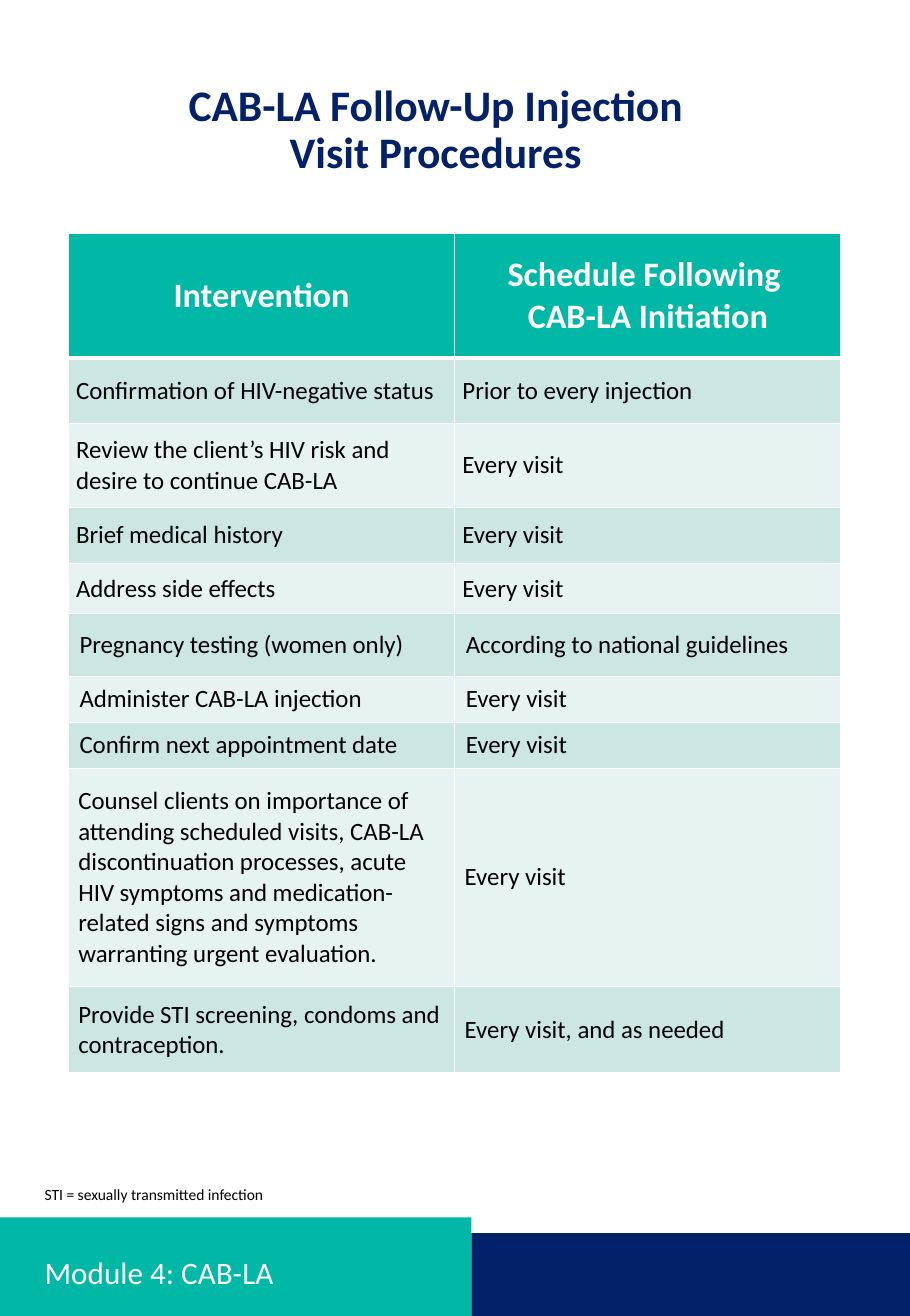
from lxml import etree
from pptx import Presentation
from pptx.dml.color import RGBColor
from pptx.enum import shapes, text
from pptx.oxml.ns import qn
from pptx.util import Inches, Pt

COLORS = {"navy": "022169", "teal": "00B8A5", "white": "FFFFFF", "black": "000000",
          "band_dark": "CCE6E1", "band_light": "E7F3F0"}
FONT = "Calibri"
SLIDE_SIZE = (65 / 8, 11.75)

FOOTER_BARS = [
    ((4.21, 11.01, 3.92, 0.75), "navy"),
    ((0, 10.87, 4.21, 0.89), "teal"),
]
LABELS = [
    {"text": "CAB-LA Follow-Up Injection Visit Procedures", "at": (1.41, 0.7, 4.96, 1.06),
     "size": 28, "color": "navy", "bold": True, "align": text.PP_ALIGN.CENTER,
     "anchor": text.MSO_ANCHOR.TOP, "spacing": 0.9},
    {"text": "STI = sexually transmitted infection", "at": (0.3, 10.53, 2.2, 0.27),
     "size": 10, "color": "black", "bold": False, "align": text.PP_ALIGN.LEFT,
     "anchor": text.MSO_ANCHOR.TOP, "spacing": 1.0},
    {"text": "Module 4: CAB-LA", "at": (0.3, 11.13, 3.59, 0.5),
     "size": 20, "color": "white", "bold": False, "align": text.PP_ALIGN.LEFT,
     "anchor": text.MSO_ANCHOR.MIDDLE, "spacing": 0.9},
]

TABLE_AT = (0.61, 2.08, 6.9, 7.51)
TIGHT, NORMAL, MEDIUM = (0.07, 0.04), (0.1, 0.05), (0.09, 0.05)
VISIT_ROWS = [
    (1.12, TIGHT, "Intervention", "Schedule Following \nCAB-LA Initiation"),
    (0.58, TIGHT, "Confirmation of HIV-negative status", "Prior to every injection"),
    (0.75, TIGHT, "Review the client’s HIV risk and desire to continue CAB-LA", "Every visit"),
    (0.5, TIGHT, "Brief medical history", "Every visit"),
    (0.45, TIGHT, "Address side effects", "Every visit"),
    (0.56, NORMAL, "Pregnancy testing (women only)", "According to national guidelines"),
    (0.41, NORMAL, "Administer CAB-LA injection", "Every visit"),
    (0.41, NORMAL, "Confirm next appointment date", "Every visit"),
    (1.95, MEDIUM, "Counsel clients on importance of attending scheduled visits, CAB-LA "
     "discontinuation processes, acute HIV symptoms and medication-related signs and "
     "symptoms warranting urgent evaluation.", "Every visit"),
    (0.77, MEDIUM, "Provide STI screening, condoms and contraception.",
     "Every visit, and as needed"),
]


def rgb(name):
    return RGBColor.from_string(COLORS[name])


def box(at):
    return [Inches(length) for length in at]


def format_text(text_frame, size, color, bold, align, spacing=None):
    for paragraph in text_frame.paragraphs:
        paragraph.alignment = align
        if spacing:
            paragraph.line_spacing = spacing
        for run in paragraph.runs:
            run.font.name = FONT
            run.font.size = Pt(size)
            run.font.bold = bold
            run.font.color.rgb = rgb(color)


def add_bar(slide, at, color):
    shape = slide.shapes.add_shape(shapes.MSO_SHAPE.RECTANGLE, *box(at))
    shape.shadow.inherit = False
    shape.fill.solid()
    shape.fill.fore_color.rgb = rgb(color)
    shape.line.fill.background()


def add_label(slide, label):
    text_frame = slide.shapes.add_textbox(*box(label["at"])).text_frame
    text_frame.word_wrap = True
    text_frame.vertical_anchor = label["anchor"]
    text_frame.text = label["text"]
    format_text(text_frame, label["size"], label["color"], label["bold"],
                label["align"], label["spacing"])


def add_borders(cell, row_index):
    widths = {"a:lnL": 1, "a:lnR": 1, "a:lnT": 3 if row_index == 1 else 1,
              "a:lnB": 3 if row_index == 0 else 1}
    properties = cell._tc.get_or_add_tcPr()
    for position, (tag, width) in enumerate(widths.items()):
        line = etree.Element(qn(tag), w=str(Pt(width)))
        fill = etree.SubElement(line, qn("a:solidFill"))
        etree.SubElement(fill, qn("a:srgbClr"), val=COLORS["white"])
        properties.insert(position, line)


def fill_cell(cell, content, row_index, margins):
    side, edge = (Inches(margin) for margin in margins)
    cell.margin_left = cell.margin_right = side
    cell.margin_top = cell.margin_bottom = edge
    cell.vertical_anchor = text.MSO_ANCHOR.MIDDLE
    cell.text_frame.text = content
    cell.fill.solid()
    if row_index == 0:
        cell.fill.fore_color.rgb = rgb("teal")
        format_text(cell.text_frame, 22, "white", True, text.PP_ALIGN.CENTER)
    else:
        cell.fill.fore_color.rgb = rgb("band_dark" if row_index % 2 else "band_light")
        format_text(cell.text_frame, 16, "black", False, text.PP_ALIGN.LEFT)
    add_borders(cell, row_index)


def add_visit_table(slide):
    table = slide.shapes.add_table(len(VISIT_ROWS), 2, *box(TABLE_AT)).table
    for column in table.columns:
        column.width = Inches(TABLE_AT[2] / 2)
    for row_index, (height, margins, *contents) in enumerate(VISIT_ROWS):
        table.rows[row_index].height = Inches(height)
        for column_index, content in enumerate(contents):
            fill_cell(table.cell(row_index, column_index), content, row_index, margins)


def main():
    presentation = Presentation()
    presentation.slide_width, presentation.slide_height = box(SLIDE_SIZE)
    slide = presentation.slides.add_slide(presentation.slide_layouts[6])
    for at, color in FOOTER_BARS:
        add_bar(slide, at, color)
    add_visit_table(slide)
    for label in LABELS:
        add_label(slide, label)
    presentation.save("out.pptx")


if __name__ == "__main__":
    main()
